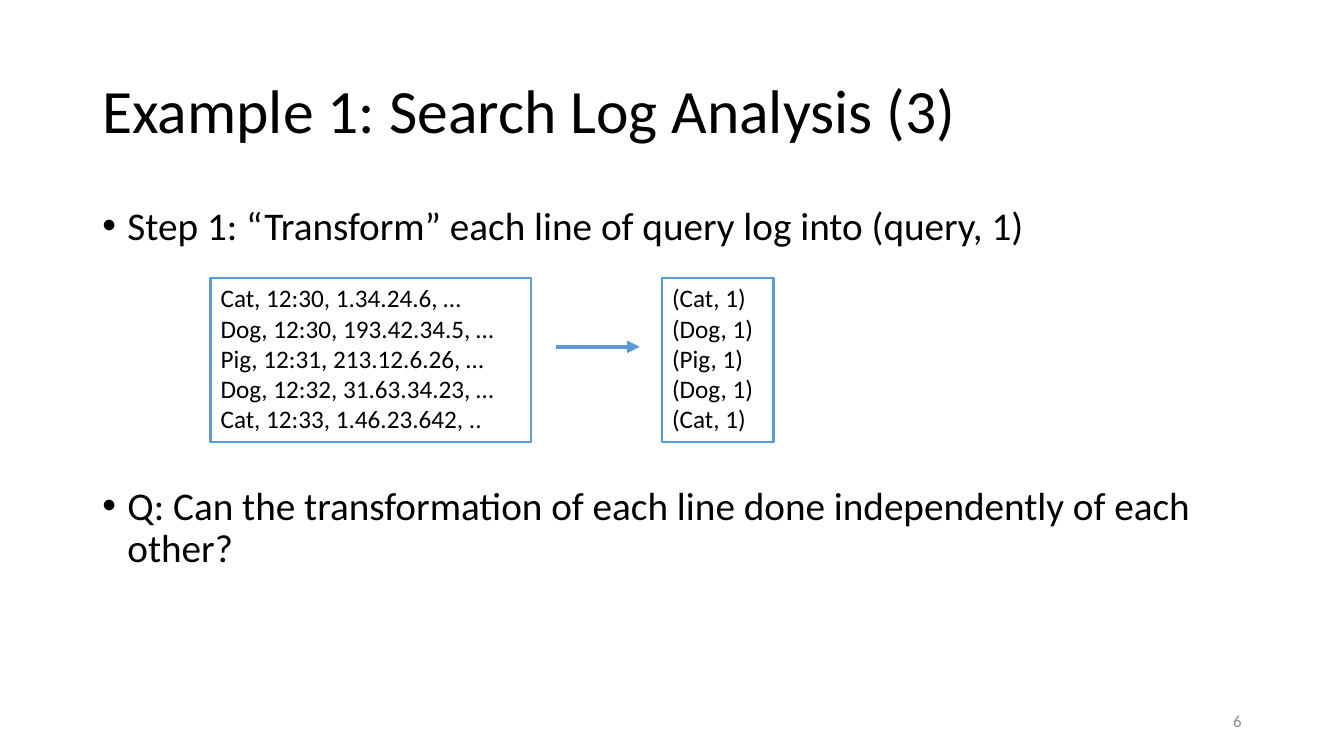
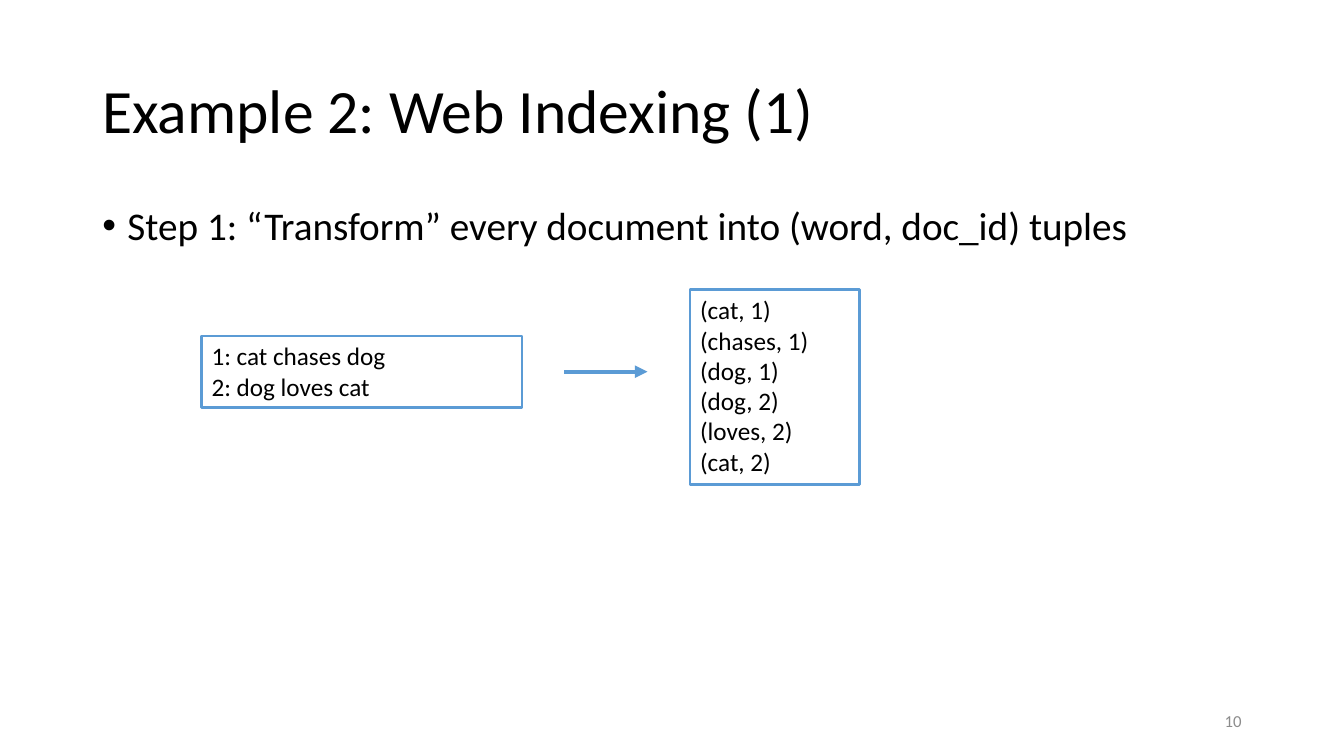
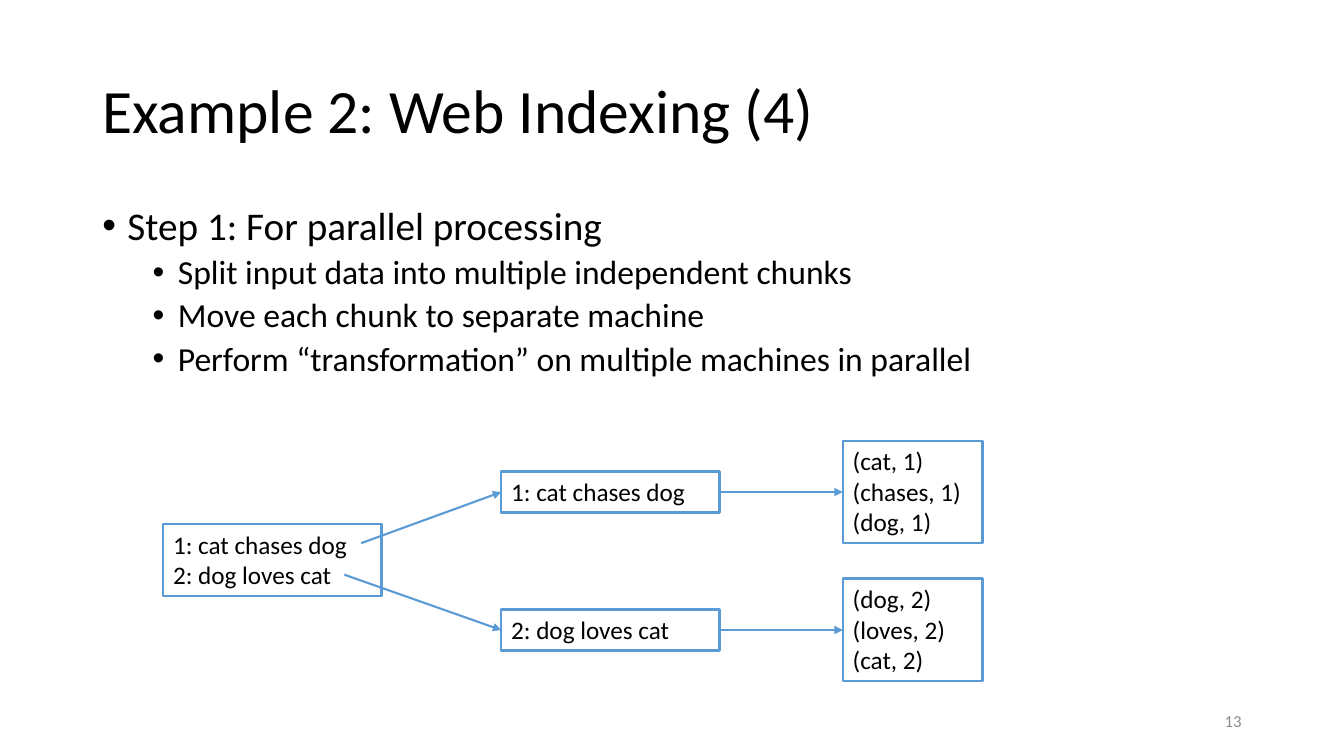
import lxml.etree
import pptx
import pptx.dml.color
import pptx.enum.shapes
import pptx.enum.text
import pptx.oxml.ns
import pptx.util

Pt = pptx.util.Pt
qn = pptx.oxml.ns.qn
ALIGN = pptx.enum.text.PP_ALIGN
ANCHOR = pptx.enum.text.MSO_ANCHOR

# Shared style
FONT = "Calibri"
BLACK, GRAY, BLUE = "000000", "8C8C8C", "5B9BD5"
MARGIN, CONTENT_WIDTH = 66, 828
LINE_HEIGHT, BOX_PADDING = 22, 7.2
TITLE = {"size": Pt(44)}
NUMBER = {"size": Pt(12)}
BOX_TEXT = {"size": Pt(18)}
# Per bullet level: font size, left indent, space before
LEVELS = [(28, 18, 10), (24, 54, 5)]


def color(hex_value):
    return pptx.dml.color.RGBColor.from_string(hex_value)


def set_attributes(target, values):
    for name, value in values.items():
        setattr(target, name, value)


def write(paragraph, text, font, hex_color=BLACK, **layout):
    run = paragraph.add_run()
    run.text = text
    set_attributes(run.font, {"name": FONT, **font})
    run.font.color.rgb = color(hex_color)
    set_attributes(paragraph, layout)


def add_text_frame(slide, left, top, width, height, anchor=ANCHOR.TOP):
    shape = slide.shapes.add_textbox(Pt(left), Pt(top), Pt(width), Pt(height))
    set_attributes(shape.text_frame, {"word_wrap": True, "vertical_anchor": anchor})
    return shape.text_frame


def next_paragraph(frame, index):
    return frame.add_paragraph() if index else frame.paragraphs[0]


def add_slide(presentation, title, number):
    """Blank slide with the common title and slide number."""
    slide = presentation.slides.add_slide(presentation.slide_layouts[6])
    frame = add_text_frame(slide, MARGIN, 28.75, CONTENT_WIDTH, 104.4, ANCHOR.MIDDLE)
    write(frame.paragraphs[0], title, TITLE, line_spacing=0.9)
    frame = add_text_frame(slide, 678, 500.5, 216, 28.75, ANCHOR.MIDDLE)
    write(frame.paragraphs[0], str(number), NUMBER, GRAY, alignment=ALIGN.RIGHT)
    return slide


def add_bullets(slide, items):
    """Items are (level, text, extra space before)."""
    frame = add_text_frame(slide, MARGIN, 143.75, CONTENT_WIDTH, 342.6)
    for index, (level, text, gap) in enumerate(items):
        size, indent, space = LEVELS[level]
        paragraph = next_paragraph(frame, index)
        write(paragraph, text, {"size": Pt(size)}, level=level,
              line_spacing=0.9, space_before=Pt(space + gap))
        properties = paragraph._p.get_or_add_pPr()
        properties.set("marL", str(Pt(indent)))
        properties.set("indent", str(Pt(-18)))
        lxml.etree.SubElement(properties, qn("a:buFont"), typeface="Arial")
        lxml.etree.SubElement(properties, qn("a:buChar"), char="•")


def add_box(slide, left, middle, width, lines):
    """Outlined box, as tall as its lines, centred on the height middle."""
    height = LINE_HEIGHT * len(lines) + BOX_PADDING
    shape = slide.shapes.add_shape(
        pptx.enum.shapes.MSO_SHAPE.RECTANGLE,
        Pt(left), Pt(middle - height / 2), Pt(width), Pt(height))
    shape.shadow.inherit = False
    shape.fill.background()
    shape.line.color.rgb = color(BLUE)
    shape.line.width = Pt(1.75)
    frame = shape.text_frame
    set_attributes(frame, {"word_wrap": True, "vertical_anchor": ANCHOR.TOP})
    for index, line in enumerate(lines):
        write(next_paragraph(frame, index), line, BOX_TEXT, alignment=ALIGN.LEFT)


def add_arrow(slide, start, end, width):
    connector = slide.shapes.add_connector(
        pptx.enum.shapes.MSO_CONNECTOR.STRAIGHT,
        *(Pt(value) for value in (*start, *end)))
    connector.line.color.rgb = color(BLUE)
    connector.line.width = Pt(width)
    properties = connector._element.spPr
    lxml.etree.SubElement(properties.find(qn("a:ln")), qn("a:tailEnd"), type="triangle")
    lxml.etree.SubElement(properties, qn("a:effectLst"))


def build_search_log(presentation):
    slide = add_slide(presentation, "Example 1: Search Log Analysis (3)", 6)
    add_bullets(slide, [
        (0, "Step 1: “Transform” each line of query log into (query, 1)", 0),
        (0, "Q: Can the transformation of each line done independently of each other?", 160),
    ])
    add_box(slide, 150.5, 257, 229, [
        "Cat, 12:30, 1.34.24.6, …",
        "Dog, 12:30, 193.42.34.5, …",
        "Pig, 12:31, 213.12.6.26, …",
        "Dog, 12:32, 31.63.34.23, …",
        "Cat, 12:33, 1.46.23.642, ..",
    ])
    animals = ["Cat", "Dog", "Pig", "Dog", "Cat"]
    add_box(slide, 473, 257, 79.5, [f"({animal}, 1)" for animal in animals])
    add_arrow(slide, (397.5, 247.75), (457, 247.75), 3)


def build_web_indexing(presentation, documents, tuples):
    slide = add_slide(presentation, "Example 2: Web Indexing (1)", 10)
    add_bullets(slide, [
        (0, "Step 1: “Transform” every document into (word, doc_id) tuples", 0),
    ])
    add_box(slide, 144, 265.5, 229, documents)
    add_box(slide, 493, 276.5, 121, tuples[0] + tuples[1])
    add_arrow(slide, (403, 265.5), (462.5, 265.5), 3)


def build_parallel_indexing(presentation, documents, tuples):
    slide = add_slide(presentation, "Example 2: Web Indexing (4)", 13)
    add_bullets(slide, [
        (0, "Step 1: For parallel processing", 0),
        (1, "Split input data into multiple independent chunks", 0),
        (1, "Move each chunk to separate machine", 0),
        (1, "Perform “transformation” on multiple machines in parallel", 0),
    ])
    add_box(slide, 116.5, 400, 156, documents)
    # One row per machine: chunk, then its tuples
    chunk_left, chunk_width, tuples_left = 358, 156, 602
    split_points = [(258, 388), (246, 410.5)]
    for row, (document, words) in enumerate(zip(documents, tuples)):
        middle = 351.5 + 98.5 * row
        add_box(slide, chunk_left, middle, chunk_width, [document])
        add_box(slide, tuples_left, middle, 100, words)
        add_arrow(slide, split_points[row], (chunk_left, middle), 1.5)
        add_arrow(slide, (chunk_left + chunk_width, middle), (tuples_left, middle), 1.5)


def main():
    presentation = pptx.Presentation()
    presentation.slide_width, presentation.slide_height = Pt(960), Pt(540)
    sentences = ["cat chases dog", "dog loves cat"]
    documents = [f"{key}: {text}" for key, text in enumerate(sentences, 1)]
    tuples = [[f"({word}, {key})" for word in text.split()]
              for key, text in enumerate(sentences, 1)]
    build_search_log(presentation)
    build_web_indexing(presentation, documents, tuples)
    build_parallel_indexing(presentation, documents, tuples)
    presentation.save("out.pptx")


if __name__ == "__main__":
    main()
